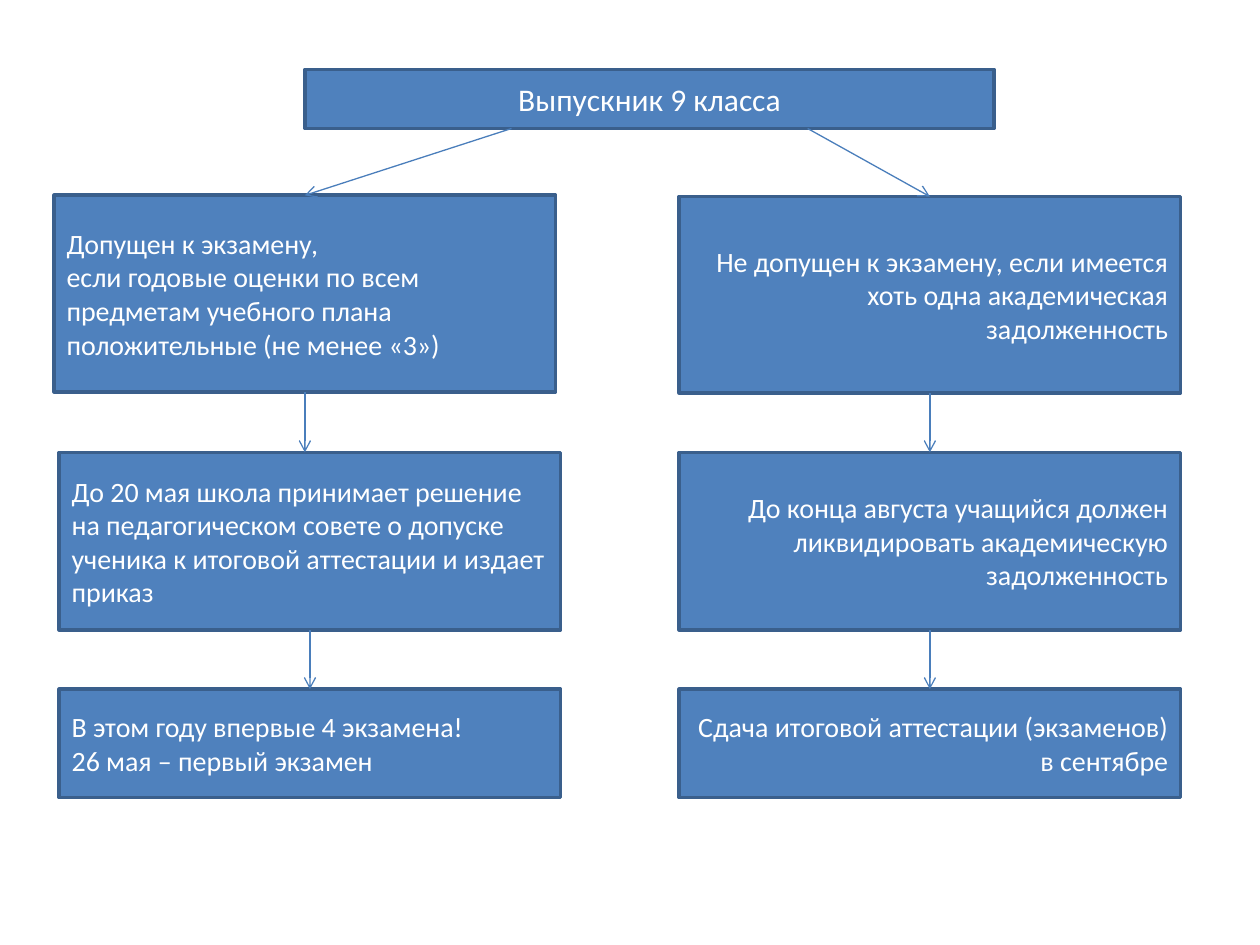
"""Build a flowchart slide on exam admission for ninth-grade graduates."""
from dataclasses import dataclass

from lxml import etree
from pptx import Presentation
from pptx.dml.color import RGBColor as RGB
from pptx.enum.shapes import MSO_CONNECTOR as CONN, MSO_SHAPE as SHAPE
from pptx.enum.text import MSO_ANCHOR as ANCHOR, MSO_AUTO_SIZE as AUTO, PP_ALIGN as ALIGN
from pptx.oxml.ns import qn
from pptx.util import Inches, Pt


@dataclass(frozen=True)
class Theme:
    font: str = "Calibri"
    fill: RGB = RGB(0x4F, 0x81, 0xBD)
    border: RGB = RGB(0x3A, 0x5F, 0x8C)
    arrow: RGB = RGB(0x4A, 0x7E, 0xBB)
    text: RGB = RGB(0xFF, 0xFF, 0xFF)
    title_size: Pt = Pt(18)
    body_size: Pt = Pt(16)
    border_width: Pt = Pt(2)
    arrow_width: Pt = Pt(0.75)


T = Theme()


def fill_box(sp, text, size=T.body_size, align=ALIGN.LEFT):
    sp.fill.solid()
    sp.fill.fore_color.rgb = T.fill
    sp.line.color.rgb = T.border
    sp.line.width = T.border_width
    tf = sp.text_frame
    tf.word_wrap = True
    tf.auto_size = AUTO.NONE
    tf.vertical_anchor = ANCHOR.MIDDLE
    tf.text = text
    for p in tf.paragraphs:
        p.alignment = align
        for r in p.runs:
            r.font.name = T.font
            r.font.size = size
            r.font.color.rgb = T.text


def add_arrow(s, x1, y1, x2, y2):
    cxn = s.shapes.add_connector(CONN.STRAIGHT, x1, y1, x2, y2)
    cxn.line.color.rgb = T.arrow
    cxn.line.width = T.arrow_width
    etree.SubElement(cxn.line._get_or_add_ln(), qn("a:tailEnd"), type="arrow")
    etree.SubElement(cxn._element.spPr, qn("a:effectLst"))
    return cxn


prs = Presentation()
prs.slide_width, prs.slide_height = Inches(10), Inches(7.5)
s = prs.slides.add_slide(prs.slide_layouts[5])

title = s.shapes.title
title.left, title.top = Inches(2.42), Inches(0.55)
title.width, title.height = Inches(5.47), Inches(0.47)
fill_box(title, "Выпускник 9 класса", size=T.title_size, align=ALIGN.CENTER)

box_width = 3.98
lower_rows = [(3.59, 1.41), (5.47, 0.86)]
branches = [
    (4.06, ALIGN.LEFT, (0.43, 0.47, 0.47), (1.55, 1.56), [
        "Допущен к экзамену,\nесли годовые оценки по всем предметам учебного плана "
        "положительные (не менее «3»)",
        "До 20 мая школа принимает решение на педагогическом совете о допуске "
        "ученика к итоговой аттестации и издает приказ",
        "В этом году впервые 4 экзамена!\n26 мая – первый экзамен",
    ]),
    (6.41, ALIGN.RIGHT, (5.39, 5.39, 5.39), (1.56, 1.56), [
        "Не допущен к экзамену, если имеется хоть одна академическая задолженность",
        "До конца августа учащийся должен ликвидировать академическую задолженность",
        "Сдача итоговой аттестации (экзаменов) в сентябре",
    ]),
]

for start_x, align, lefts, first_row, texts in branches:
    above = None
    for left, (top, height), text in zip(lefts, [first_row, *lower_rows], texts):
        sp = s.shapes.add_shape(SHAPE.RECTANGLE, Inches(left), Inches(top),
                                Inches(box_width), Inches(height))
        sp.shadow.inherit = False
        fill_box(sp, text, align=align)
        middle = sp.left + sp.width // 2
        if above is None:
            cxn = add_arrow(s, Inches(start_x), title.top + title.height, middle, sp.top)
            cxn.end_connect(sp, 0)
        else:
            x = above.left + above.width // 2
            cxn = add_arrow(s, x, above.top + above.height, x, sp.top)
            cxn.begin_connect(above, 2)
            if x == middle:
                cxn.end_connect(sp, 0)
        above = sp

prs.save("out.pptx")
